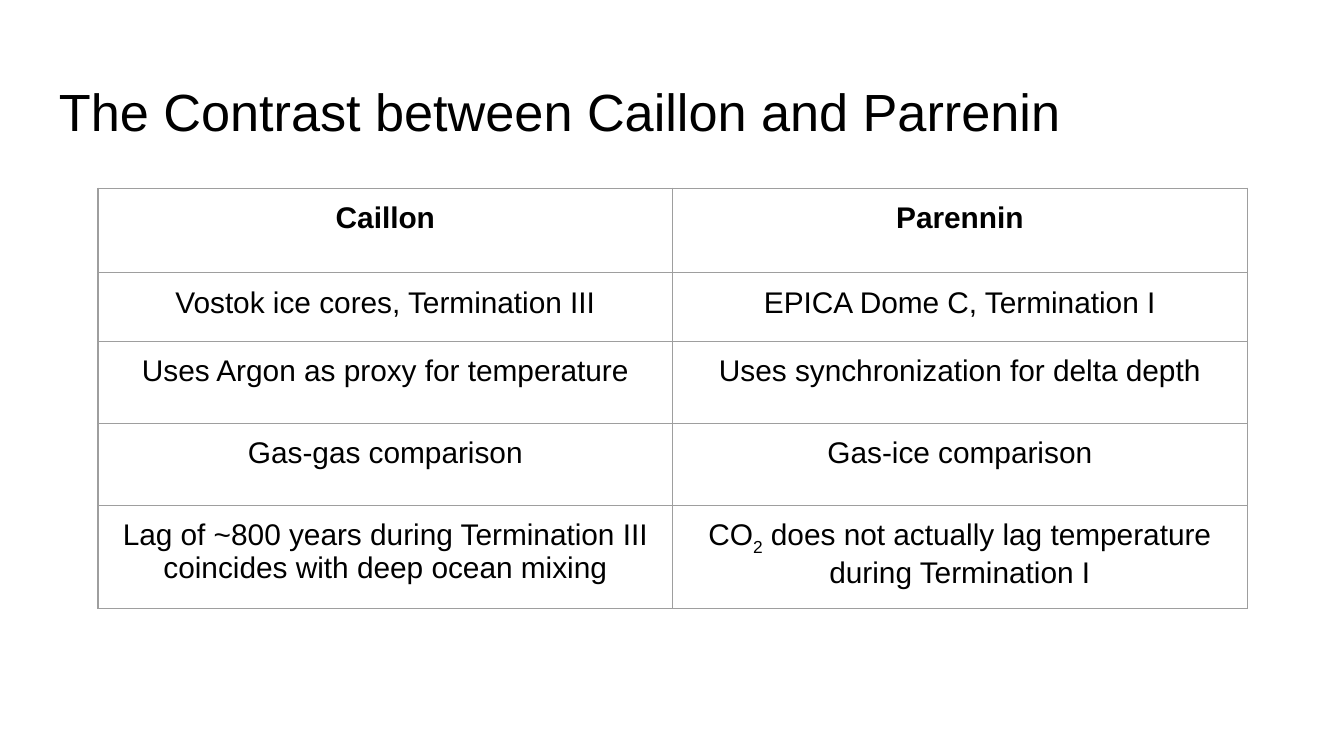
from dataclasses import dataclass

from lxml.etree import SubElement
from pptx import Presentation
from pptx.dml.color import RGBColor
from pptx.enum.text import PP_ALIGN
from pptx.oxml.ns import qn
from pptx.util import Inches, Pt


@dataclass(frozen=True)
class Theme:
    font: str = "Arial"
    ink: str = "000000"
    rule: str = "9E9E9E"
    line: float = 0.75
    head: int = 28
    body: int = 16
    inset: float = 0.1


THEME = Theme()
WIDE = 10
TITLE = "The Contrast between Caillon and Parrenin"
# A cell is a list of runs; a run is (text, baseline shift in percent)
ROWS = [
    ([("Caillon", 0)], [("Parennin", 0)]),
    ([("Vostok ice cores, Termination III", 0)],
     [("EPICA Dome C, Termination I", 0)]),
    ([("Uses Argon as proxy for temperature", 0)],
     [("Uses synchronization for delta depth", 0)]),
    ([("Gas-gas comparison", 0)], [("Gas-ice comparison", 0)]),
    ([("Lag of ~800 years during Termination III coincides with deep ocean mixing", 0)],
     [("CO", 0), ("2", -25),
      (" does not actually lag temperature during Termination I", 0)]),
]
HEIGHTS = [0.63, 0.51, 0.61, 0.61, 0.61]


def add_run(para, text, size, bold=False, shift=0):
    run = para.add_run()
    run.text = text
    font = run.font
    font.name, font.size, font.bold = THEME.font, Pt(size), bold
    font.color.rgb = RGBColor.from_string(THEME.ink)
    if shift:
        run._r.get_or_add_rPr().set("baseline", str(shift * 1000))


def set_inset(part):
    part.margin_left = part.margin_right = Inches(THEME.inset)
    part.margin_top = part.margin_bottom = Inches(THEME.inset)


def add_edges(cell):
    props = cell._tc.get_or_add_tcPr()
    for side in ("lnL", "lnR", "lnT", "lnB"):
        edge = SubElement(props, qn(f"a:{side}"), w=str(Pt(THEME.line)))
        fill = SubElement(edge, qn("a:solidFill"))
        SubElement(fill, qn("a:srgbClr"), val=THEME.rule)


def add_title(slide, left, top, width, height):
    box = slide.shapes.add_textbox(*map(Inches, (left, top, width, height)))
    frame = box.text_frame
    frame.word_wrap = True
    set_inset(frame)
    add_run(frame.paragraphs[0], TITLE, THEME.head)


def add_grid(slide, left, top, width, height):
    count = len(ROWS[0])
    frame = slide.shapes.add_table(
        len(ROWS), count, *map(Inches, (left, top, width, height)))
    table = frame.table
    table.first_row = table.horz_banding = False
    for col in table.columns:
        col.width = Inches(width / count)
    for r, (row, tall) in enumerate(zip(ROWS, HEIGHTS)):
        table.rows[r].height = Inches(tall)
        for c, runs in enumerate(row):
            cell = table.cell(r, c)
            set_inset(cell)
            # Edges must come before the fill in the cell properties
            add_edges(cell)
            cell.fill.background()
            para = cell.text_frame.paragraphs[0]
            para.alignment = PP_ALIGN.CENTER
            for text, shift in runs:
                add_run(para, text, THEME.body, r == 0, shift)


def main():
    deck = Presentation()
    # Widescreen, 16 to 9
    deck.slide_width, deck.slide_height = Inches(WIDE), Inches(WIDE * 9 / 16)
    slide = deck.slides.add_slide(deck.slide_layouts[6])
    # Heading
    add_title(slide, 0.34, 0.49, 9.32, 0.63)
    # Comparison table
    add_grid(slide, 0.73, 1.4, 8.55, 3.09)
    deck.save("out.pptx")


if __name__ == "__main__":
    main()
